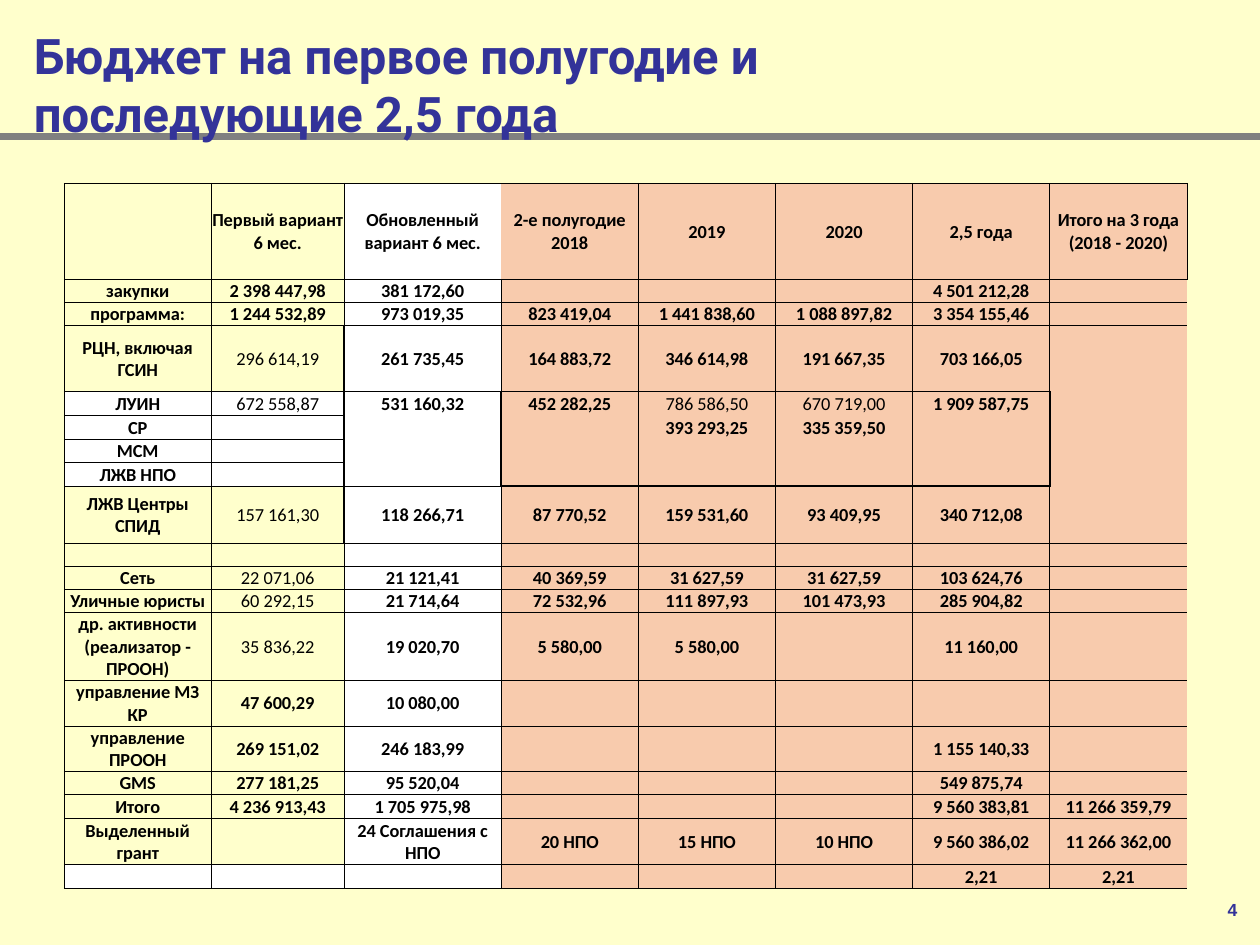
from dataclasses import dataclass

from lxml.etree import SubElement
from pptx import Presentation
from pptx.dml.color import RGBColor
from pptx.enum.shapes import MSO_CONNECTOR
from pptx.enum.text import MSO_ANCHOR, MSO_AUTO_SIZE, PP_ALIGN
from pptx.oxml.ns import qn
from pptx.util import Pt


@dataclass(frozen=True)
class Theme:
    background: str = "FFFFCC"
    accent: str = "333399"
    rule: str = "808080"
    ink: str = "000000"
    white: str = "FFFFFF"
    forecast: str = "F8CBAD"
    title_font: str = "Roboto"
    table_font: str = "Calibri"
    number_font: str = "Arial"
    title_size: float = 28
    table_size: float = 10.5
    number_size: float = 10
    thin: float = 0.5
    thick: float = 1


THEME = Theme()
NO_STYLE = "{2D5ABB26-0587-4C30-8999-92F81FD0307C}"
COLUMN_WIDTHS = [84, 76, 89.7] + [78.4] * 5
ROW_HEIGHTS = [54.9, 13.1, 13.1, 37.7, 13.7, 13.7, 13.1, 13.1, 32.6, 13.1,
               13.1, 13.1, 38.9, 25.7, 25.7, 13.1, 13.7, 26.3, 13.7]
ROWS = [
    ("", "Первый вариант 6 мес.", "Обновленный\nвариант 6 мес.", "2-е полугодие 2018",
     "2019", "2020", "2,5 года", "Итого на 3 года (2018 - 2020)"),
    ("закупки", "2 398 447,98", "381 172,60", "", "", "", "4 501 212,28", ""),
    ("программа:", "1 244 532,89", "973 019,35", "823 419,04", "1 441 838,60",
     "1 088 897,82", "3 354 155,46", ""),
    ("РЦН, включая ГСИН", "296 614,19", "261 735,45", "164 883,72", "346 614,98",
     "191 667,35", "703 166,05", ""),
    ("ЛУИН", "672 558,87", "531 160,32", "452 282,25", "786 586,50",
     "670 719,00", "1 909 587,75", ""),
    ("СР", "", "", "", "393 293,25", "335 359,50", "", ""),
    ("МСМ", "", "", "", "", "", "", ""),
    ("ЛЖВ НПО", "", "", "", "", "", "", ""),
    ("ЛЖВ Центры СПИД", "157 161,30", "118 266,71", "87 770,52", "159 531,60",
     "93 409,95", "340 712,08", ""),
    ("", "", "", "", "", "", "", ""),
    ("Сеть", "22 071,06", "21 121,41", "40 369,59", "31 627,59", "31 627,59",
     "103 624,76", ""),
    ("Уличные юристы", "60 292,15", "21 714,64", "72 532,96", "111 897,93",
     "101 473,93", "285 904,82", ""),
    ("др. активности (реализатор - ПРООН)", "35 836,22", "19 020,70", "5 580,00",
     "5 580,00", "", "11 160,00", ""),
    ("управление МЗ КР", "47 600,29", "10 080,00", "", "", "", "", ""),
    ("управление ПРООН", "269 151,02", "246 183,99", "", "", "", "1 155 140,33", ""),
    ("GMS", "277 181,25", "95 520,04", "", "", "", "549 875,74", ""),
    ("Итого", "4 236 913,43", "1 705 975,98", "", "", "", "9 560 383,81",
     "11 266 359,79"),
    ("Выделенный грант", "", "24 Соглашения с НПО", "20 НПО", "15 НПО", "10 НПО",
     "9 560 386,02", "11 266 362,00"),
    ("", "", "", "", "", "", "2,21", "2,21"),
]
GROUP_ROWS = range(4, 8)
REGULAR_CELLS = {(row, 1) for row in (3, 4, 8, 10, 11, 12)} | {(4, 4), (4, 5)}


def color(value):
    return RGBColor.from_string(value)


def write_text(frame, text, *, font, size, ink, bold=True, align=PP_ALIGN.LEFT):
    for index, line in enumerate(text.split("\n")):
        para = frame.paragraphs[0] if index == 0 else frame.add_paragraph()
        para.alignment = align
        if not line:
            SubElement(para._p, qn("a:endParaRPr"), sz=str(int(size * 100)))
            continue
        span = para.add_run()
        span.text = line
        span.font.name = font
        span.font.size = Pt(size)
        span.font.bold = bold
        span.font.color.rgb = color(ink)


def vertical_width(row, edge):
    if edge == len(COLUMN_WIDTHS):
        return THEME.thin if row == 0 else 0
    if row == 0 and edge == 3:
        return 0
    if (edge == 2 and 3 <= row <= 8) or (row in GROUP_ROWS and edge >= 2):
        return THEME.thick
    return THEME.thin


def horizontal_width(edge, column):
    if column == 7 and 4 <= edge <= 8:
        return 0
    if 2 <= column <= 6 and 5 <= edge <= 7:
        return 0
    if 3 <= column <= 6 and edge in (4, 8):
        return THEME.thick
    return THEME.thin


def set_borders(cell, row, column):
    widths = {
        "a:lnL": vertical_width(row, column),
        "a:lnR": vertical_width(row, column + 1),
        "a:lnT": horizontal_width(row, column),
        "a:lnB": horizontal_width(row + 1, column),
    }
    properties = cell._tc.get_or_add_tcPr()
    for side, width in widths.items():
        line = SubElement(properties, qn(side), w=str(Pt(width)))
        if width:
            fill = SubElement(line, qn("a:solidFill"))
            SubElement(fill, qn("a:srgbClr"), val=THEME.ink)
        else:
            SubElement(line, qn("a:noFill"))


def set_fill(cell, row, column):
    if column < 2 and row not in GROUP_ROWS and row != len(ROWS) - 1:
        cell.fill.background()
        return
    cell.fill.solid()
    cell.fill.fore_color.rgb = color(THEME.forecast if column > 2 else THEME.white)


def add_budget_table(page):
    frame = page.shapes.add_table(
        len(ROWS), len(COLUMN_WIDTHS), Pt(36.7), Pt(104.8),
        Pt(sum(COLUMN_WIDTHS)), Pt(sum(ROW_HEIGHTS)))
    table = frame.table
    table.first_row = False
    table.horz_banding = False
    frame.element.xpath(".//a:tableStyleId")[0].text = NO_STYLE
    for column, width in zip(table.columns, COLUMN_WIDTHS):
        column.width = Pt(width)
    for row, height in zip(table.rows, ROW_HEIGHTS):
        row.height = Pt(height)
    for row, texts in enumerate(ROWS):
        for column, text in enumerate(texts):
            cell = table.cell(row, column)
            cell.margin_left = cell.margin_right = cell.margin_top = Pt(0.5)
            cell.margin_bottom = Pt(0)
            cell.vertical_anchor = MSO_ANCHOR.MIDDLE
            set_borders(cell, row, column)
            set_fill(cell, row, column)
            write_text(cell.text_frame, text, font=THEME.table_font,
                       size=THEME.table_size, ink=THEME.ink,
                       bold=(row, column) not in REGULAR_CELLS,
                       align=PP_ALIGN.CENTER)


def add_title_rule(page):
    rule = page.shapes.add_connector(
        MSO_CONNECTOR.STRAIGHT, Pt(0), Pt(78), Pt(720), Pt(78))
    rule.line.color.rgb = color(THEME.rule)
    rule.line.width = Pt(4.5)
    SubElement(rule.element.spPr, qn("a:effectLst"))
    return rule


def set_title(page, text):
    title = page.shapes.title
    title.left, title.top, title.width, title.height = Pt(12.2), Pt(24), Pt(612), Pt(48)
    frame = title.text_frame
    frame.word_wrap = True
    frame.auto_size = MSO_AUTO_SIZE.NONE
    frame.vertical_anchor = MSO_ANCHOR.MIDDLE
    write_text(frame, text, font=THEME.title_font, size=THEME.title_size,
               ink=THEME.accent)
    return title


def add_page_number(page, text):
    box = page.shapes.add_textbox(Pt(546), Pt(510), Pt(168), Pt(19.4))
    box.text_frame.word_wrap = True
    write_text(box.text_frame, text, font=THEME.number_font,
               size=THEME.number_size, ink=THEME.accent, align=PP_ALIGN.RIGHT)


def main():
    deck = Presentation()
    deck.slide_width, deck.slide_height = Pt(720), Pt(540)
    page = deck.slides.add_slide(deck.slide_layouts[5])
    page.background.fill.solid()
    page.background.fill.fore_color.rgb = color(THEME.background)
    title = set_title(page, "Бюджет на первое полугодие и последующие 2,5 года")
    rule = add_title_rule(page)
    rule.element.addnext(title.element)
    add_budget_table(page)
    add_page_number(page, "4")
    deck.save("out.pptx")


if __name__ == "__main__":
    main()
